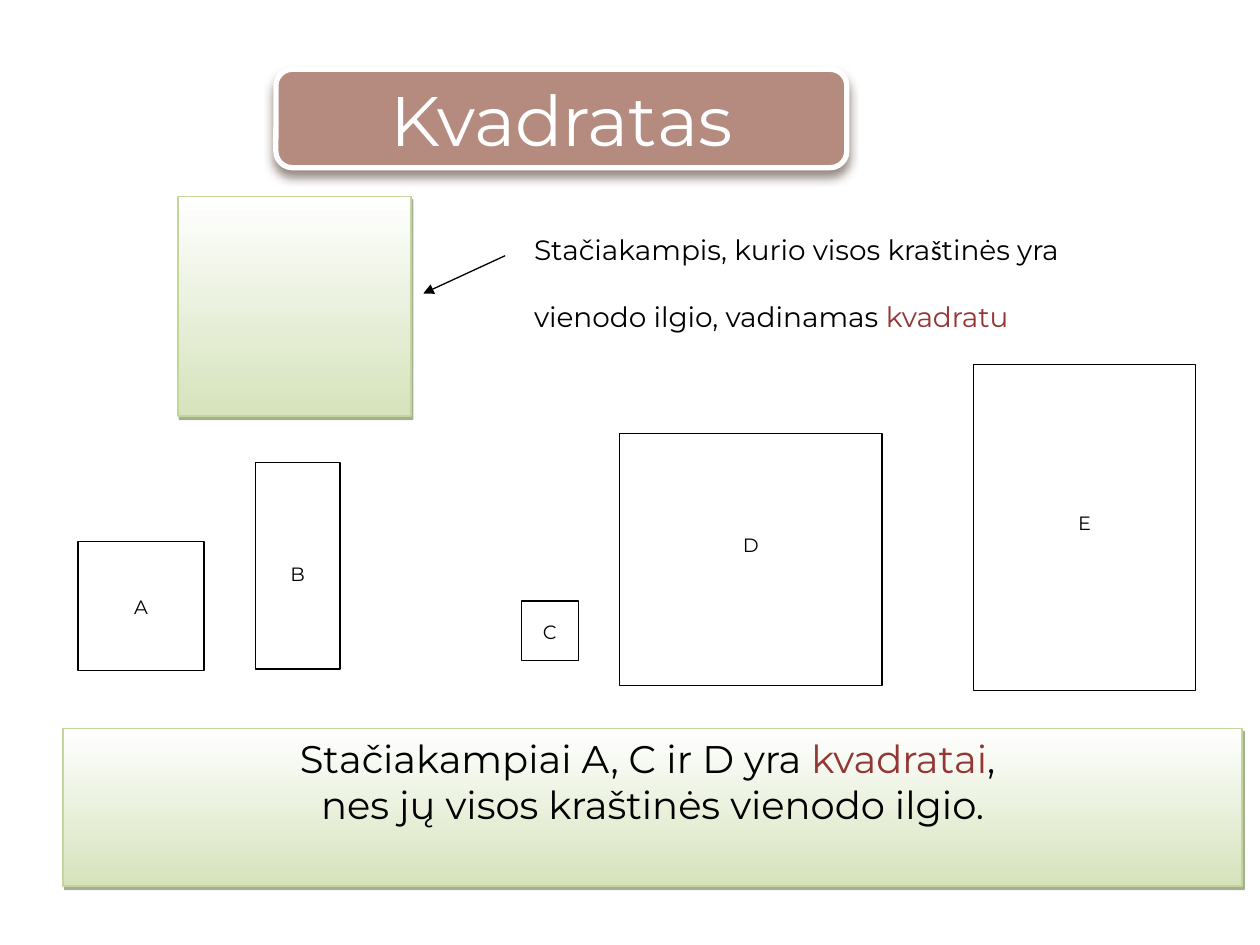
from pptx import Presentation
from pptx.dml.color import RGBColor
from pptx.enum.shapes import MSO_CONNECTOR as Link, MSO_SHAPE as Kind
from pptx.enum.text import MSO_ANCHOR as Anchor, MSO_AUTO_SIZE as Fit, PP_ALIGN as Align
from pptx.oxml.ns import qn
from pptx.util import Pt
from lxml import etree

FONT = "Montserrat"
BLACK, WHITE, RED = "000000", "FFFFFF", "943634"
GREEN, EDGE = "D6E3BC", "C2D69B"
LINE = 13.4  # height of one label line


def tint(hue):
    return RGBColor.from_string(hue)


def put(slide, kind, box, fill, edge, width):
    shape = slide.shapes.add_shape(kind, *map(Pt, box))
    shape.shadow.inherit = False
    if fill:
        shape.fill.solid()
        shape.fill.fore_color.rgb = tint(fill)
    shape.line.color.rgb = tint(edge)
    shape.line.width = Pt(width)
    return shape


def shade(shape, hue, alpha, blur, dist, angle):
    """Fill the empty effect list with an outer shadow."""
    effects = shape._element.spPr.find(qn("a:effectLst"))
    outer = etree.SubElement(
        effects, qn("a:outerShdw"), blurRad=str(Pt(blur)), dist=str(Pt(dist)),
        dir=str(angle * 60000), algn="ctr", rotWithShape="0")
    color = etree.SubElement(outer, qn("a:srgbClr"), val=hue)
    etree.SubElement(color, qn("a:alpha"), val=str(alpha * 1000))


def write(shape, lines, size, align=Align.CENTER, anchor=Anchor.TOP, gap=0, top=3.6):
    """Each line is a list of runs: (text, colour) or (text, colour, font)."""
    frame = shape.text_frame
    frame.word_wrap = True
    frame.auto_size = Fit.NONE
    frame.vertical_anchor = anchor
    frame.margin_top = Pt(top)
    for i, runs in enumerate(lines):
        para = frame.add_paragraph() if i else frame.paragraphs[0]
        para.alignment = align
        para.space_before = Pt(gap if i else 0)
        for text, hue, *font in runs:
            run = para.add_run()
            run.text = text
            run.font.size = Pt(size)
            run.font.name = font[0] if font else FONT
            run.font.color.rgb = tint(hue)


def panel(slide, kind, box):
    """Green gradient box with a shadow."""
    shape = put(slide, kind, box, None, EDGE, 1)
    shape.fill.gradient()
    shape.fill.gradient_angle = 270
    for stop, hue, spot in zip(shape.fill.gradient_stops, (WHITE, GREEN), (0, 1)):
        stop.color.rgb = tint(hue)
        stop.position = spot
    shade(shape, "4E6128", 50, 0, 2.2, 63)
    return shape


def banner(slide, box):
    plate = put(slide, Kind.ROUNDED_RECTANGLE, box, "B58B80", WHITE, 3)
    shade(plate, "4E3B30", 60, 6, 4, 90)
    title = slide.shapes.title
    title.left, title.top, title.width, title.height = map(Pt, box)
    slide.shapes._spTree.append(title._element)  # bring above the plate
    write(title, [[("Kvadratas", WHITE)]], 40, anchor=Anchor.MIDDLE)


def arrow(slide, start, end):
    link = slide.shapes.add_connector(Link.STRAIGHT, *map(Pt, start + end))
    link.line.color.rgb = tint(BLACK)
    link.line.width = Pt(0.75)
    etree.SubElement(link.line._get_or_add_ln(), qn("a:tailEnd"), type="triangle")
    etree.SubElement(link._element.spPr, qn("a:effectLst"))


def rule(slide, box):
    """Definition of a square, with its example and arrow."""
    x, y, w, h = box
    panel(slide, Kind.FLOWCHART_PROCESS, (x, y, 133.2, 125.3))
    arrow(slide, (x + 187.2, y + 33.8), (x + 140.4, y + 55.4))
    note = slide.shapes.add_textbox(Pt(x + 196.6), Pt(y - 5.8), Pt(w - 196.6), Pt(h))
    write(note, [
        [("Stačiakampis, kurio visos kra", BLACK), ("š", BLACK, "Calibri"),
         ("tinės yra", BLACK)],
        [("vienodo ilgio, vadinamas ", BLACK), ("kvadratu", RED)],
    ], 16, Align.LEFT, gap=18.8, top=26.5)


def figures(slide, box):
    """Lettered rectangles; drop counts the label lines above each letter."""
    x, y = box[:2]
    items = [
        ("A", Kind.FLOWCHART_PROCESS, 0, 101.5, 72, 73.4, 2),
        ("B", Kind.RECTANGLE, 101.5, 56.2, 48.2, 118.1, 4),
        ("C", Kind.RECTANGLE, 253.4, 135.4, 32.4, 33.8, 0.55),
        ("D", Kind.RECTANGLE, 309.6, 39.6, 149.8, 144, 4),
        ("E", Kind.RECTANGLE, 511.9, 0, 126.7, 186.5, 6),
    ]
    for name, kind, dx, dy, w, h, drop in items:
        shape = put(slide, kind, (x + dx, y + dy, w, h), WHITE, BLACK, 0.75)
        write(shape, [[(name, BLACK)]], 11, top=3.6 + drop * LINE)


def answer(slide, box):
    write(panel(slide, Kind.RECTANGLE, box), [
        [("Stačiakampiai A, C ir D yra ", BLACK), ("kvadratai", RED), (", ", BLACK)],
        [("nes jų visos kraštinės vienodo ilgio.", BLACK)],
    ], 22)


def main():
    deck = Presentation()
    deck.slide_width, deck.slide_height = Pt(720), Pt(540)
    slide = deck.slides.add_slide(deck.slide_layouts[5])
    rule(slide, (101.5, 112.3, 585.4, 108.7))
    figures(slide, (44.6, 208.1, 638.6, 186.5))
    answer(slide, (36, 416.2, 673.9, 90))
    banner(slide, (157.7, 39.6, 326.2, 56.2))
    deck.save("out.pptx")


if __name__ == "__main__":
    main()
